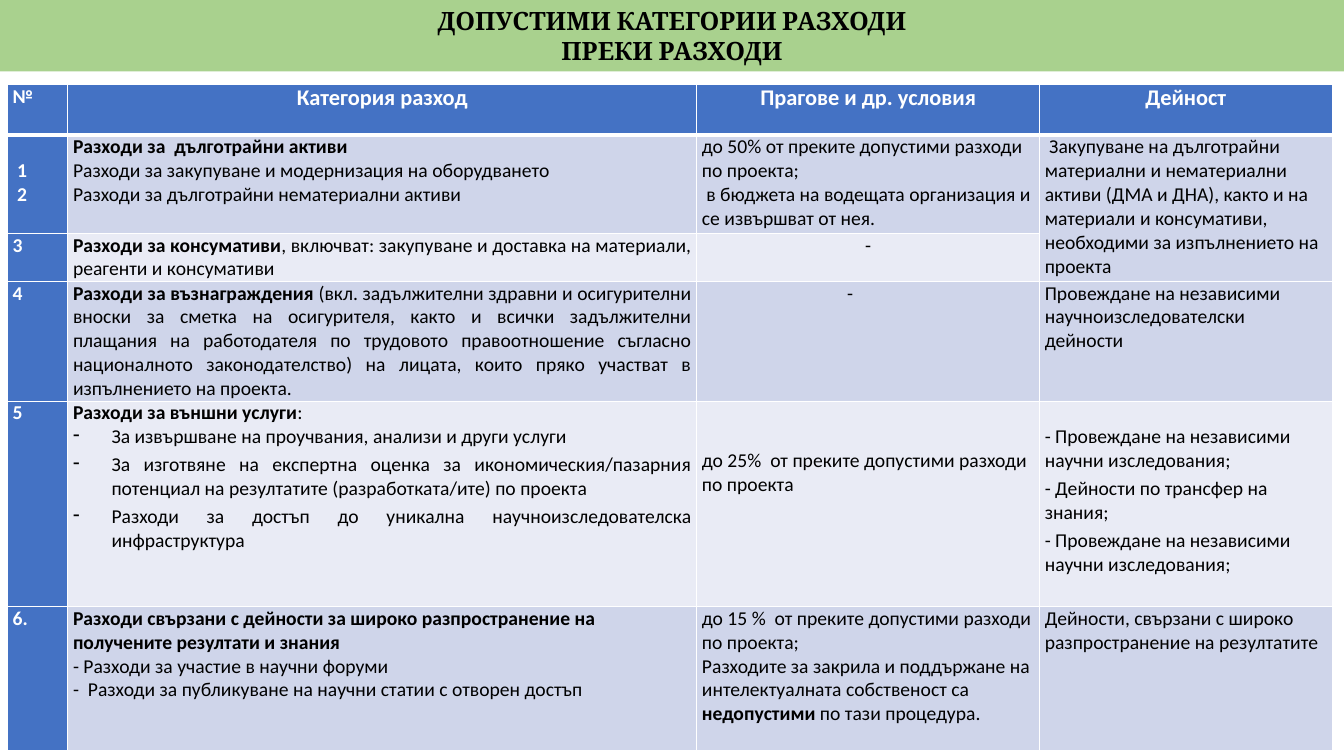
from lxml import etree
from pptx import Presentation
from pptx.dml.color import RGBColor
from pptx.enum import text
from pptx.oxml import ns
from pptx.util import Cm, Pt

BLACK = RGBColor(0, 0, 0)
WHITE = RGBColor(255, 255, 255)
BLUE = RGBColor(0x44, 0x72, 0xC4)
GREEN = RGBColor(0xA9, 0xD1, 0x8E)
BANDS = [RGBColor(0xE9, 0xEB, 0xF5), RGBColor(0xCF, 0xD5, 0xEA)]
LEFT, MID, JUST = text.PP_ALIGN.LEFT, text.PP_ALIGN.CENTER, text.PP_ALIGN.JUSTIFY

# Cell text: one line per paragraph, * switches bold, • starts a dash bullet
ROWS = [
    ["№", "Категория разход", "Прагове и др. условия", "Дейност"],
    [
        "\u00a01\n\u00a02",
        "*Разходи за  дълготрайни активи*\n"
        "Разходи за закупуване и модернизация на оборудването\n"
        "Разходи за дълготрайни нематериални активи",
        "до 50% от преките допустими разходи по проекта;\n"
        " в бюджета на водещата организация и се извършват от нея.",
        "\u00a0Закупуване на дълготрайни материални и нематериални активи "
        "(ДМА и ДНА), както и на материали и консумативи, необходими за "
        "изпълнението на проекта",
    ],
    [
        "3",
        "*Разходи за консумативи*, включват: закупуване и доставка на "
        "материали, реагенти и консумативи",
        "-",
        "",
    ],
    [
        "4",
        "*Разходи за възнаграждения *(вкл. задължителни здравни и "
        "осигурителни вноски за сметка на осигурителя, както и всички "
        "задължителни плащания на работодателя по трудовото правоотношение "
        "съгласно националното законодателство) на лицата, които пряко "
        "участват в изпълнението на проекта.",
        "-",
        "Провеждане на независими научноизследователски дейности",
    ],
    [
        "5",
        "*Разходи за външни услуги*:\n"
        "•За извършване на проучвания, анализи и други услуги\n"
        "•За изготвяне на експертна оценка за икономическия/пазарния "
        "потенциал на резултатите (разработката/ите) по проекта\n"
        "•Разходи за достъп до уникална научноизследователска инфраструктура",
        "до 25%  от преките допустими разходи по проекта",
        "- Провеждане на независими научни изследования;\n"
        "- Дейности по трансфер на знания;\n"
        "- Провеждане на независими научни изследования;",
    ],
    [
        "6.",
        "*Разходи свързани с дейности за широко разпространение на "
        "получените резултати и знания*\n"
        "- Разходи за участие в научни форуми\n"
        "-  Разходи за публикуване на научни статии с отворен достъп",
        "до 15 %  от преките допустими разходи по проекта;\n"
        "Разходите за закрила и поддържане на интелектуалната собственост са "
        "*недопустими* по тази процедура.",
        "Дейности, свързани с широко разпространение на резултатите",
    ],
]
WIDTHS = [1.52, 15.85, 8.64, 7.37]
HEIGHTS = [1.28, 2.47, 1.21, 3.02, 5.18, 3.63]
TOPS = {(1, 0): 0.6, (4, 2): 1.2, (4, 3): 0.6}  # extra space above the text


def edge(cell, side, width):
    """Draw one white border of a cell."""
    line = etree.SubElement(cell._tc.get_or_add_tcPr(), ns.qn("a:ln" + side),
                            w=str(Pt(width)))
    fill = etree.SubElement(line, ns.qn("a:solidFill"))
    etree.SubElement(fill, ns.qn("a:srgbClr"), val=str(WHITE))


def bullet(para):
    """Give a paragraph a hanging dash."""
    props = para._p.get_or_add_pPr()
    props.set("marL", str(Cm(0.97)))
    props.set("indent", str(-Cm(0.97)))
    etree.SubElement(props, ns.qn("a:buChar"), char="-")


deck = Presentation()
deck.slide_width, deck.slide_height = Cm(33.87), Cm(19.05)
slide = deck.slides.add_slide(deck.slide_layouts[5])

# Title band
title = slide.shapes.title
title.left, title.top, title.width, title.height = 0, 0, Cm(33.87), Cm(1.8)
title.fill.solid()
title.fill.fore_color.rgb = GREEN
frame = title.text_frame
frame.text = "ДОПУСТИМИ КАТЕГОРИИ РАЗХОДИ\nПРЕКИ РАЗХОДИ"
frame.auto_size = text.MSO_AUTO_SIZE.NONE
frame.vertical_anchor = text.MSO_ANCHOR.MIDDLE
frame.margin_top = frame.margin_bottom = 0
for para in frame.paragraphs:
    para.alignment = MID
    para.font.name, para.font.size = "Cambria", Pt(18)
    para.font.bold = True
    para.font.color.rgb = BLACK

# Table grid
table = slide.shapes.add_table(len(ROWS), len(WIDTHS), Cm(0.19), Cm(2.13),
                               Cm(sum(WIDTHS)), Cm(sum(HEIGHTS))).table
for col, width in zip(table.columns, WIDTHS):
    col.width = Cm(width)
for row, height in zip(table.rows, HEIGHTS):
    row.height = Cm(height)

# Cells
for r, line in enumerate(ROWS):
    for c, words in enumerate(line):
        cell = table.cell(r, c)
        head = r == 0 or c == 0
        for side in "LRTB":
            thick = (r, side) in [(0, "B"), (1, "T")]
            edge(cell, side, 3 if thick else 1)
        cell.fill.solid()
        cell.fill.fore_color.rgb = BLUE if head else BANDS[r % 2]
        cell.margin_left = cell.margin_right = Cm(0.13)
        cell.margin_top, cell.margin_bottom = Cm(TOPS.get((r, c), 0)), 0

        for i, part in enumerate(words.split("\n") if words else []):
            body = cell.text_frame
            para = body.paragraphs[0] if i == 0 else body.add_paragraph()
            if words == "-" or (r == 0 and c > 0):
                para.alignment = MID
            else:
                para.alignment = JUST if c == 1 and r < 5 else LEFT
            if part.startswith("•") or (r, c) == (4, 3):
                para.space_after = Pt(3)
            if part.startswith("•"):
                bullet(para)
            para.font.name = "Calibri"
            para.font.size = Pt(16 if r == 0 and c > 0 else 14)
            para.font.color.rgb = WHITE if head else BLACK
            for k, piece in enumerate(part.lstrip("•").split("*")):
                if piece:
                    run = para.add_run()
                    run.text = piece
                    run.font.bold = head or k % 2 == 1

# The fourth row's dash sits left of centre; one activity covers two rows
table.cell(3, 2).margin_right = Cm(1.04)
table.cell(1, 3).merge(table.cell(2, 3))

deck.save("out.pptx")
